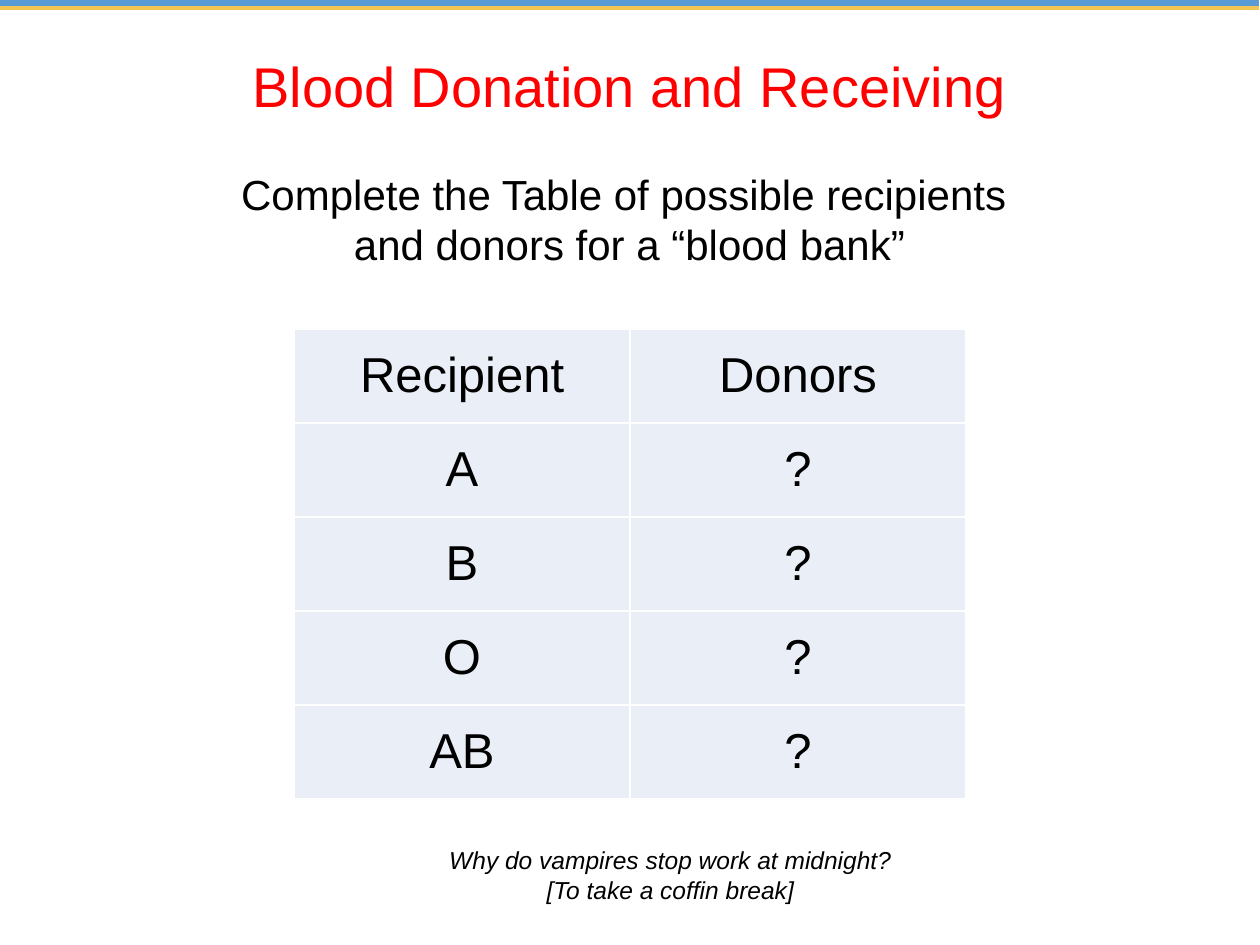
"""Build the blood donation slide with its recipient and donor table."""
from lxml.etree import SubElement as Sub
from pptx import Presentation
from pptx.dml.color import RGBColor
from pptx.enum.shapes import MSO_CONNECTOR as Conn
from pptx.enum.text import MSO_ANCHOR as Anchor, MSO_AUTO_SIZE as Auto, PP_ALIGN as Align
from pptx.oxml.ns import qn
from pptx.util import Pt

SCALE = 914400 / 126
FONT, BLACK, RED = "Arial", "000000", "FF0000"
WHITE, PALE = "FFFFFF", "EAEFF7"

RULES = [(4, "5B9BD5", 4), (8, "F2C552", 2)]
HEAD = [
    ("Blood Donation and Receiving", 32, RED),
    ("Complete the Table of possible recipients ", 24, BLACK),
    ("and donors for a “blood bank”", 24, BLACK),
]
JOKE = [
    ("Why do vampires stop work at midnight?", 14, BLACK),
    ("[To take a coffin break]", 14, BLACK),
]
ROWS = [("Recipient", "Donors"), ("A", "?"), ("B", "?"), ("O", "?"), ("AB", "?")]
HEAD_BOX = (222, 44, 815, 233)
JOKE_BOX = (355, 839, 631, 72)
LEFT, TOP, COL, ROW = 294, 329, 336, 94


def px(n):
    return round(n * SCALE)


def rgb(code):
    return RGBColor.from_string(code)


def write(frame, lines, italic=False):
    frame.text = "\n".join(line[0] for line in lines)
    for par, (_, size, color) in zip(frame.paragraphs, lines):
        par.alignment = Align.CENTER
        for run in par.runs:
            font = run.font
            font.name, font.size = FONT, Pt(size)
            font.bold, font.italic = False, italic
            font.color.rgb = rgb(color)


def place(shape, box):
    shape.left, shape.top, shape.width, shape.height = map(px, box)


def add_rule(slide, y, color, width):
    rule = slide.shapes.add_connector(Conn.STRAIGHT, px(-1), px(y), px(1259), px(y))
    rule.line.color.rgb = rgb(color)
    rule.line.width = Pt(width)
    Sub(rule.element.spPr, qn("a:effectLst"))


def edge(cell):
    props = cell._tc.get_or_add_tcPr()
    for i, side in enumerate(("lnL", "lnR", "lnT", "lnB")):
        line = props.makeelement(qn(f"a:{side}"), {"w": str(Pt(1))})
        Sub(Sub(line, qn("a:solidFill")), qn("a:srgbClr"), val=WHITE)
        props.insert(i, line)


def add_grid(slide):
    count, wide = len(ROWS), len(ROWS[0])
    box = map(px, (LEFT, TOP, COL * wide, ROW * count))
    table = slide.shapes.add_table(count, wide, *box).table
    table.first_row = table.horz_banding = False
    for col in table.columns:
        col.width = px(COL)
    for row, words in zip(table.rows, ROWS):
        row.height = px(ROW)
        for cell, word in zip(row.cells, words):
            write(cell.text_frame, [(word, 28, BLACK)])
            cell.vertical_anchor = Anchor.MIDDLE
            cell.margin_left = cell.margin_right = px(9)
            cell.margin_top = cell.margin_bottom = 0
            cell.fill.solid()
            cell.fill.fore_color.rgb = rgb(PALE)
            edge(cell)


def main():
    deck = Presentation()
    deck.slide_width, deck.slide_height = px(1260), px(945)
    slide = deck.slides.add_slide(deck.slide_layouts[5])
    for rule in RULES:
        add_rule(slide, *rule)
    add_grid(slide)

    title = slide.shapes.title
    place(title, HEAD_BOX)
    frame = title.text_frame
    write(frame, HEAD)
    frame.word_wrap = False
    frame.auto_size = Auto.NONE
    frame.vertical_anchor = Anchor.MIDDLE
    frame.paragraphs[1].space_before = Pt(28)

    joke = slide.shapes.add_textbox(*map(px, JOKE_BOX)).text_frame
    joke.word_wrap = True
    write(joke, JOKE, italic=True)
    deck.save("out.pptx")


if __name__ == "__main__":
    main()
